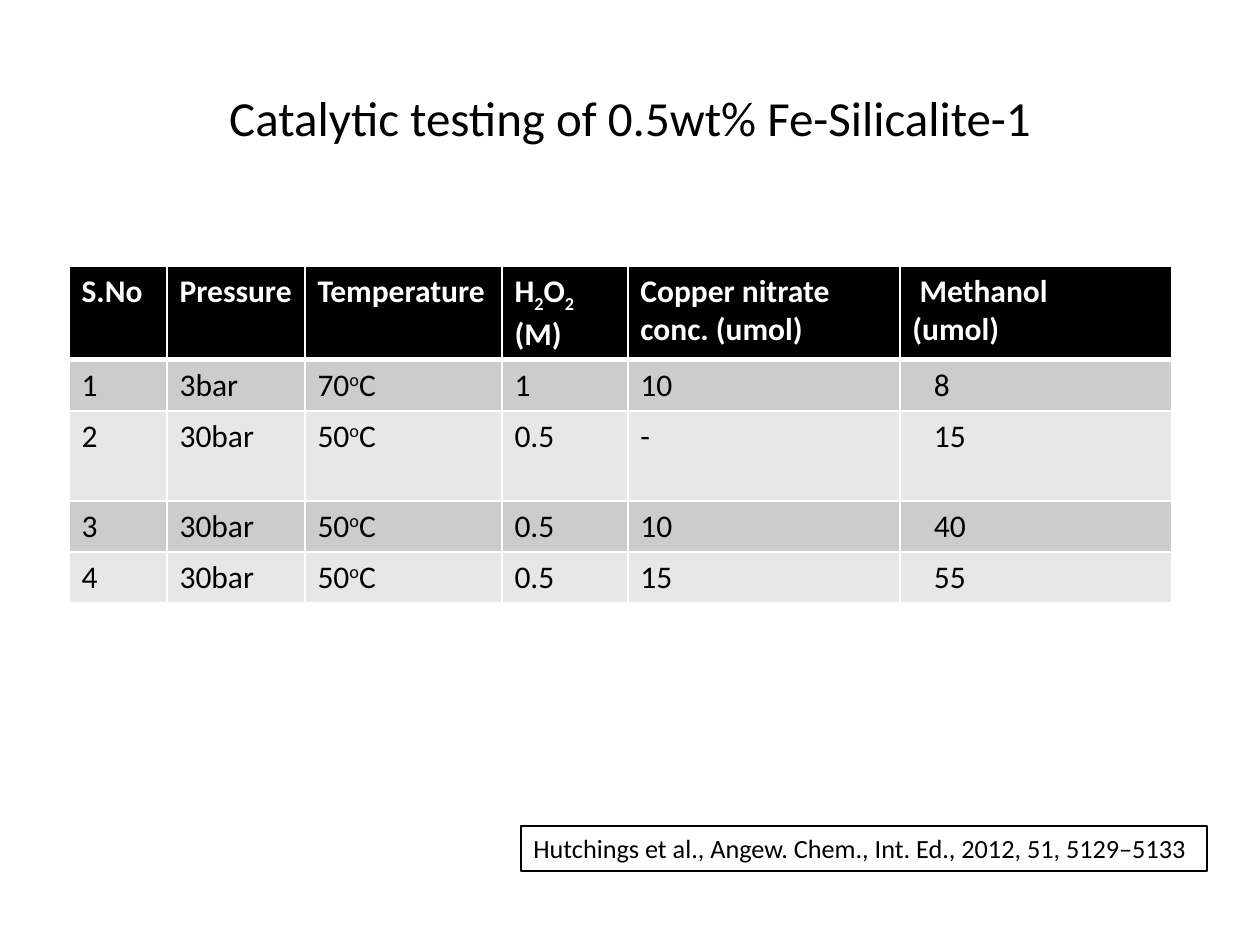
from pptx import Presentation
from pptx.dml.color import RGBColor
from pptx.enum.text import MSO_ANCHOR, PP_ALIGN
from pptx.oxml.ns import qn
from pptx.util import Pt
from lxml.etree import SubElement

PX = 914400 // 126
COLORS = {"ink": "000000", "paper": "FFFFFF", "odd": "CCCCCC", "even": "E7E7E7"}


def add_text(paragraph, text, size, color="ink", bold=False, baseline=0):
    """Add runs; every second part between bars is raised or lowered."""
    for index, part in enumerate(text.split("|")):
        run = paragraph.add_run()
        run.text = part
        for name, value in {"name": "Calibri", "size": Pt(size), "bold": bold}.items():
            setattr(run.font, name, value)
        run.font.color.rgb = RGBColor.from_string(COLORS[color])
        if index % 2:
            run.font._element.set("baseline", str(baseline))


def set_border(cell, side, points):
    line = SubElement(cell._tc.get_or_add_tcPr(), qn(f"a:ln{side}"), w=str(Pt(points)))
    fill = SubElement(line, qn("a:solidFill"))
    SubElement(fill, qn("a:srgbClr"), val=COLORS["paper"])


presentation = Presentation()
presentation.slide_width, presentation.slide_height = 1260 * PX, 945 * PX
slide = presentation.slides.add_slide(presentation.slide_layouts[5])

# Title
title = slide.shapes.title
title.left, title.top, title.width, title.height = 63 * PX, 38 * PX, 1134 * PX, 157 * PX
title.text_frame.vertical_anchor = MSO_ANCHOR.MIDDLE
title_paragraph = title.text_frame.paragraphs[0]
title_paragraph.alignment = PP_ALIGN.CENTER
add_text(title_paragraph, "Catalytic testing of 0.5wt% Fe-Silicalite-1", 28)

# Results table
ROWS = [
    ["S.No", "Pressure", "Temperature", "H|2|O|2| (M)",
     "Copper nitrate conc. (umol)", " Methanol\n(umol)"],
    ["1", "3bar", "70|o|C", "1", "10", "8"],
    ["2", "30bar", "50|o|C", "0.5", "-", "15"],
    ["3", "30bar", "50|o|C", "0.5", "10", "40"],
    ["4", "30bar", "50|o|C", "0.5", "15", "55"],
]
COLUMN_WIDTHS = [98, 138, 197, 126, 272, 272]
ROW_HEIGHTS = [92, 51, 90, 51, 51]
METHANOL_COLUMN = len(COLUMN_WIDTHS) - 1

table = slide.shapes.add_table(
    len(ROWS), len(COLUMN_WIDTHS), 69 * PX, 266 * PX,
    sum(COLUMN_WIDTHS) * PX, sum(ROW_HEIGHTS) * PX).table
for column, width in zip(table.columns, COLUMN_WIDTHS):
    column.width = width * PX
for row, height in zip(table.rows, ROW_HEIGHTS):
    row.height = height * PX

for row_index, texts in enumerate(ROWS):
    header = row_index == 0
    fill_name = "ink" if header else ("odd" if row_index % 2 else "even")
    text_format = {"color": "paper" if header else "ink", "bold": header,
                   "baseline": -25000 if header else 30000}
    for column_index, text in enumerate(texts):
        cell = table.cell(row_index, column_index)
        for side in "LRTB":
            thick = (header and side == "B") or (row_index == 1 and side == "T")
            set_border(cell, side, 3 if thick else 1)
        cell.fill.solid()
        cell.fill.fore_color.rgb = RGBColor.from_string(COLORS[fill_name])
        if column_index == METHANOL_COLUMN and not header:
            cell.margin_left = 34 * PX
        for line_index, line_text in enumerate(text.split("\n")):
            frame = cell.text_frame
            paragraph = frame.add_paragraph() if line_index else frame.paragraphs[0]
            add_text(paragraph, line_text, 18, **text_format)

# Citation
citation = slide.shapes.add_textbox(521 * PX, 826 * PX, 686 * PX, 45 * PX)
citation.line.color.rgb = RGBColor.from_string(COLORS["ink"])
citation.line.width = Pt(0.75)
citation.text_frame.word_wrap = True
add_text(citation.text_frame.paragraphs[0],
         "Hutchings et al., Angew. Chem., Int. Ed., 2012, 51, 5129–5133", 15)

presentation.save("out.pptx")
